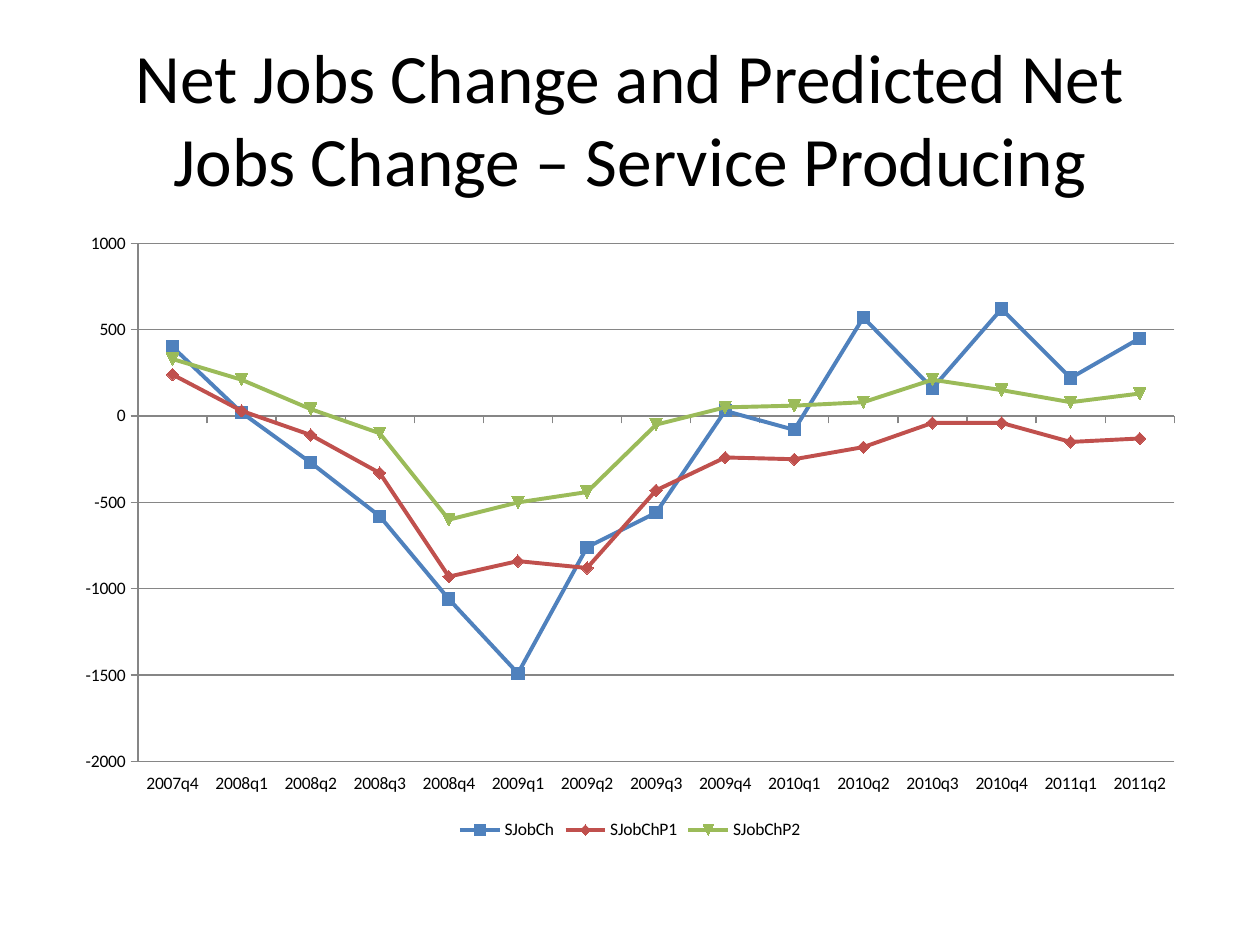
from dataclasses import dataclass

import pptx
import pptx.chart.data
import pptx.dml.color
import pptx.enum.chart
import pptx.enum.text
import pptx.util

EMU_PER_PX = 914400 / 126


@dataclass(frozen=True)
class Theme:
    font: str = "Calibri"
    text: str = "000000"
    axis: str = "868686"
    series: tuple = ("4F81BD", "C0504D", "9BBB59")
    title_size: float = 39.6
    chart_size: float = 10
    axis_width: float = 0.75
    series_width: float = 2.25
    marker_size: int = 7


THEME = Theme()
TITLE = "Net Jobs Change and Predicted Net Jobs Change – Service Producing"
QUARTERS = [f"{2007 + n // 4}q{n % 4 + 1}" for n in range(3, 18)]
JOB_CHANGES = {
    "SJobCh": (400, 20, -270, -580, -1060, -1490, -760, -560,
               30, -80, 570, 160, 620, 220, 450),
    "SJobChP1": (240, 30, -110, -330, -930, -840, -880, -430,
                 -240, -250, -180, -40, -40, -150, -130),
    "SJobChP2": (330, 210, 40, -100, -600, -500, -440, -50,
                 50, 60, 80, 210, 150, 80, 130),
}


def px(n):
    return pptx.util.Emu(round(n * EMU_PER_PX))


def rgb(value):
    return pptx.dml.color.RGBColor.from_string(value)


def style_font(font, size):
    font.name = THEME.font
    font.size = pptx.util.Pt(size)
    font.color.rgb = rgb(THEME.text)


def style_line(line, color, width):
    line.color.rgb = rgb(color)
    line.width = pptx.util.Pt(width)


def set_title(s, text, left, top, width, height):
    sp = s.shapes.title
    sp.left, sp.top, sp.width, sp.height = map(px, (left, top, width, height))
    tf = sp.text_frame
    tf.text = text
    tf.word_wrap = True
    tf.auto_size = pptx.enum.text.MSO_AUTO_SIZE.NONE
    tf.vertical_anchor = pptx.enum.text.MSO_ANCHOR.MIDDLE
    p = tf.paragraphs[0]
    p.alignment = pptx.enum.text.PP_ALIGN.CENTER
    style_font(p.runs[0].font, THEME.title_size)


def style_axes(chart):
    for axis in (chart.category_axis, chart.value_axis):
        axis.major_tick_mark = pptx.enum.chart.XL_TICK_MARK.OUTSIDE
        axis.minor_tick_mark = pptx.enum.chart.XL_TICK_MARK.NONE
        style_line(axis.format.line, THEME.axis, THEME.axis_width)
    chart.category_axis.tick_label_position = pptx.enum.chart.XL_TICK_LABEL_POSITION.LOW
    axis = chart.value_axis
    axis.minimum_scale, axis.maximum_scale, axis.major_unit = -2000, 1000, 500
    axis.has_major_gridlines = True
    style_line(axis.major_gridlines.format.line, THEME.axis, THEME.axis_width)


def style_series(series, color):
    series.smooth = False
    style_line(series.format.line, color, THEME.series_width)
    marker = series.marker
    marker.size = THEME.marker_size
    marker.format.fill.solid()
    marker.format.fill.fore_color.rgb = rgb(color)
    marker.format.line.color.rgb = rgb(color)


def add_line_chart(s, categories, values, left, top, width, height):
    data = pptx.chart.data.CategoryChartData()
    data.categories = categories
    for name, numbers in values.items():
        data.add_series(name, numbers)
    chart = s.shapes.add_chart(
        pptx.enum.chart.XL_CHART_TYPE.LINE_MARKERS,
        *map(px, (left, top, width, height)), data).chart
    style_font(chart.font, THEME.chart_size)
    chart.has_title = False
    chart.has_legend = True
    chart.legend.position = pptx.enum.chart.XL_LEGEND_POSITION.BOTTOM
    chart.legend.include_in_layout = False
    style_axes(chart)
    plot = chart.plots[0]
    plot.vary_by_categories = False
    for series, color in zip(plot.series, THEME.series):
        style_series(series, color)


def main():
    prs = pptx.Presentation()
    prs.slide_width, prs.slide_height = px(1260), px(945)
    s = prs.slides.add_slide(prs.slide_layouts.get_by_name("Title Only"))
    set_title(s, TITLE, 63, 38, 1134, 158)
    add_line_chart(s, QUARTERS, JOB_CHANGES, 63, 221, 1134, 624)
    prs.save("out.pptx")


if __name__ == "__main__":
    main()
